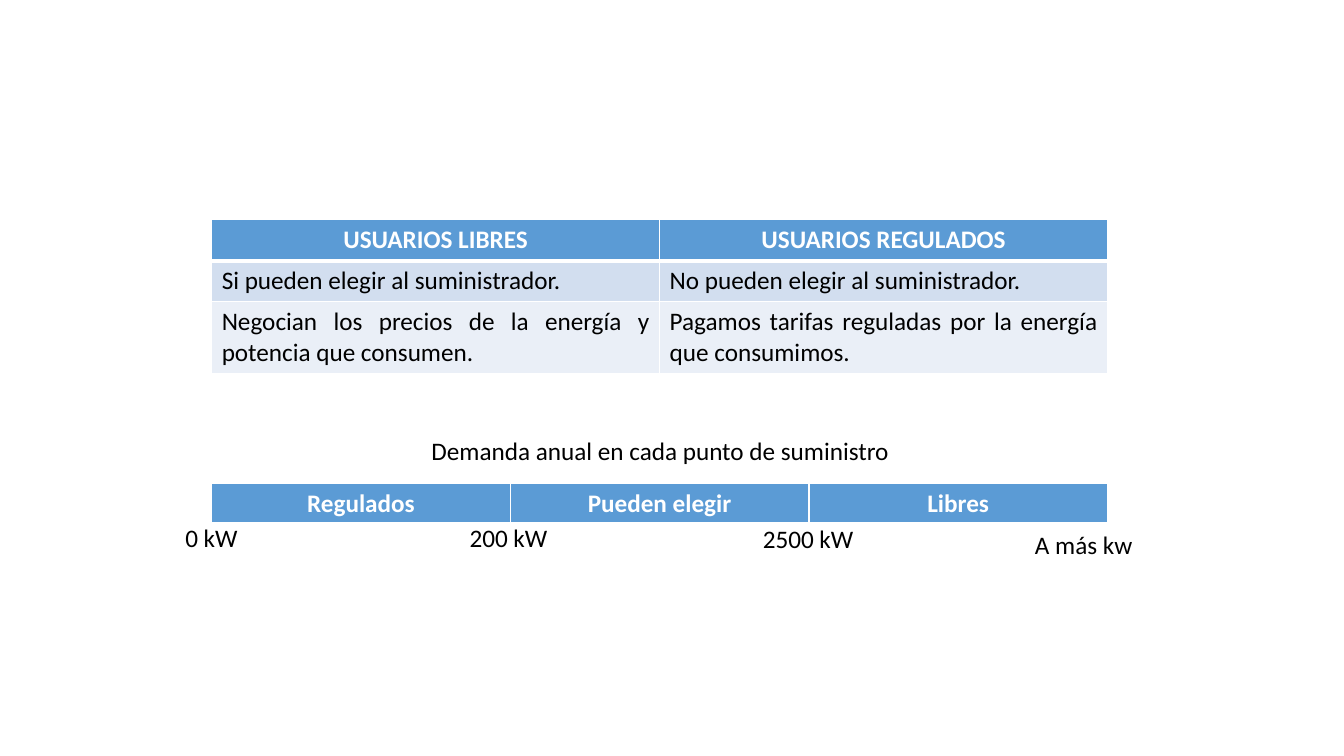
"""Build a slide that compares free and regulated electricity users."""
from lxml import etree
from pptx import Presentation
from pptx.dml.color import RGBColor
from pptx.enum.text import PP_ALIGN
from pptx.oxml.ns import qn
from pptx.util import Pt

LEFT, MID, JUST = PP_ALIGN.LEFT, PP_ALIGN.CENTER, PP_ALIGN.JUSTIFY
WHITE = RGBColor(0xFF, 0xFF, 0xFF)
BLACK = RGBColor(0, 0, 0)
BLUE = RGBColor(0x5B, 0x9B, 0xD5)
PALE = RGBColor(0xD2, 0xDE, 0xEF)
FAINT = RGBColor(0xEA, 0xEF, 0xF7)


def write(frame, text, color=BLACK, bold=False, align=LEFT):
    para = frame.paragraphs[0]
    para.alignment = align
    run = para.add_run()
    run.text = text
    run.font.name = "Calibri"
    run.font.size = Pt(18)
    run.font.bold = bold
    run.font.color.rgb = color


def edge(cell, side, width):
    line = etree.SubElement(cell._tc.get_or_add_tcPr(), qn("a:" + side), w=str(Pt(width)))
    fill = etree.SubElement(line, qn("a:solidFill"))
    etree.SubElement(fill, qn("a:srgbClr"), val=str(WHITE))


deck = Presentation()
deck.slide_width, deck.slide_height = Pt(960), Pt(540)
slide = deck.slides.add_slide(deck.slide_layouts[6])

users = [
    ["USUARIOS LIBRES", "USUARIOS REGULADOS"],
    ["Si pueden elegir al suministrador.", "No pueden elegir al suministrador."],
    ["Negocian los precios de la energía y potencia que consumen.",
     "Pagamos tarifas reguladas por la energía que consumimos."],
]
ranges = [["Regulados", "Pueden elegir", "Libres"]]

for top, rows, highs in [(157, users, [29.2, 29.2, 50.4]), (345, ranges, [29.2])]:
    cols = len(rows[0])
    grid = slide.shapes.add_table(
        len(rows), cols, Pt(151.2), Pt(top), Pt(640), Pt(sum(highs))).table
    for col in grid.columns:
        col.width = Pt(640 / cols)
    for r, texts in enumerate(rows):
        head = r == 0
        grid.rows[r].height = Pt(highs[r])
        for c, text in enumerate(texts):
            cell = grid.cell(r, c)
            edge(cell, "lnL", 1)
            edge(cell, "lnR", 1)
            edge(cell, "lnT", 1 if head else 3 if r == 1 else 1)
            edge(cell, "lnB", 3 if head else 1)
            cell.fill.solid()
            cell.fill.fore_color.rgb = [BLUE, PALE, FAINT][r]
            write(cell.text_frame, text, color=WHITE if head else BLACK,
                  bold=head, align=MID if head else JUST)

labels = [
    ("0 kW", 125.3, 369.4, 52.6, LEFT),
    ("200 kW", 328.3, 369.4, 70.6, LEFT),
    ("2500 kW", 537.8, 370, 80, LEFT),
    ("A más kw", 732.2, 374.4, 85, LEFT),
    ("Demanda anual en cada punto de suministro", 298.8, 307.4, 345.6, MID),
]
for text, left, top, width, align in labels:
    box = slide.shapes.add_textbox(Pt(left), Pt(top), Pt(width), Pt(29))
    box.text_frame.word_wrap = False
    write(box.text_frame, text, align=align)

deck.save("out.pptx")
